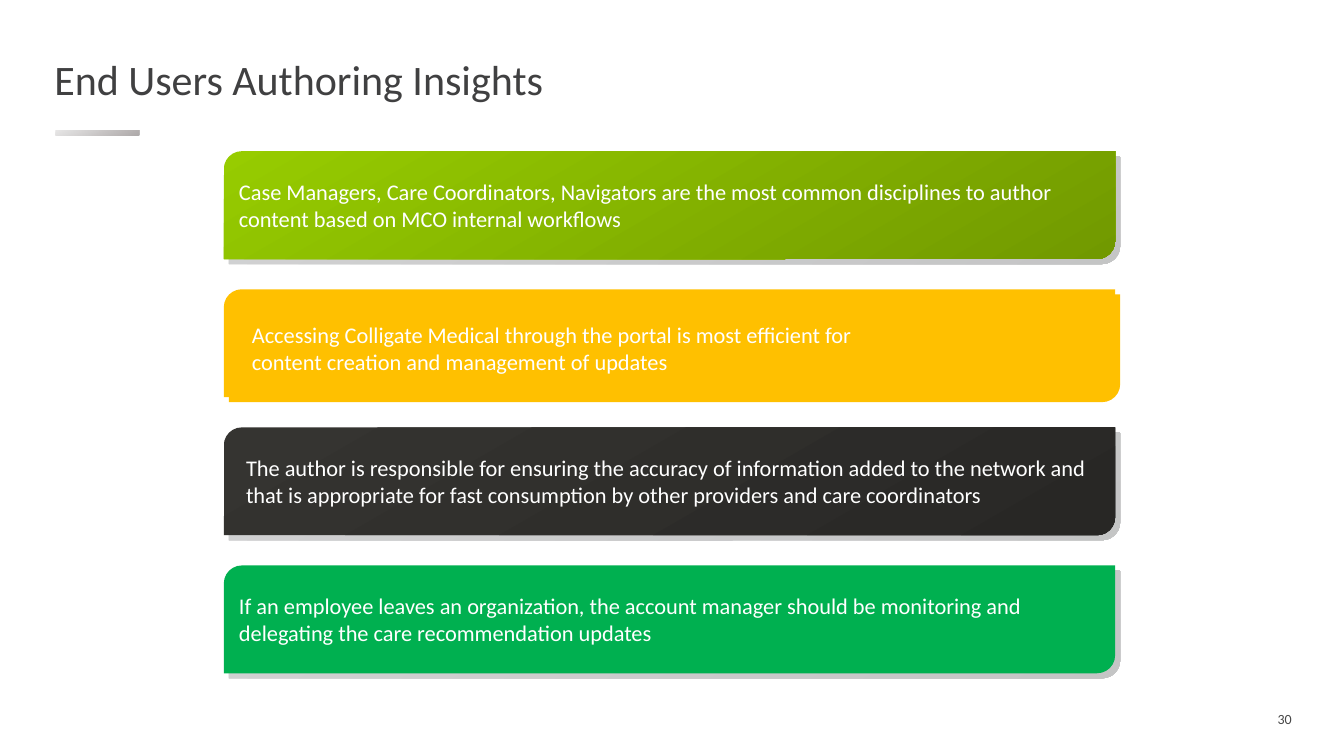
from lxml import etree
from pptx import Presentation
from pptx.dml.color import RGBColor
from pptx.enum.shapes import MSO_SHAPE
from pptx.enum.text import MSO_ANCHOR, PP_ALIGN
from pptx.oxml.ns import qn
from pptx.util import Inches, Pt

RECT = MSO_SHAPE.RECTANGLE
DIAG = MSO_SHAPE.ROUND_2_DIAG_RECTANGLE
TOP, MIDDLE = MSO_ANCHOR.TOP, MSO_ANCHOR.MIDDLE
LEFT, RIGHT = PP_ALIGN.LEFT, PP_ALIGN.RIGHT

WHITE = "FFFFFF"
SHADE = ("818285", "58595B")
AMBER = "FFC000"
PITCH = 1.37
OFFSET = 0.05

CARDS = [
    (("97CC00", "719900"), SHADE, {},
     "Case Managers, Care Coordinators, Navigators are the most common "
     "disciplines to author content based on MCO internal workflows"),
    (AMBER, AMBER, {"box": (0.18, 0.27, 6.67, 0.64)},
     "Accessing Colligate Medical through the portal is most efficient for "
     "content creation and management of updates"),
    (("353431", "282725"), SHADE, {"indent": 0.07, "after": 3},
     "The author is responsible for ensuring the accuracy of information "
     "added to the network and that is appropriate for fast consumption by "
     "other providers and care coordinators"),
    ("00B050", SHADE, {},
     "If an employee leaves an organization, the account manager should be "
     "monitoring and delegating the care recommendation updates"),
]


def color(code):
    return RGBColor.from_string(code)


def paint(shape, fill, alpha=None):
    if isinstance(fill, str):
        shape.fill.solid()
        shape.fill.fore_color.rgb = color(fill)
        return
    shape.fill.gradient()
    shape.fill.gradient_angle = 300
    for stop, code, place in zip(shape.fill.gradient_stops, fill, (0, 1)):
        stop.color.rgb = color(code)
        stop.position = place
    if alpha:
        for node in shape._element.spPr.iter(qn("a:srgbClr")):
            etree.SubElement(node, qn("a:alpha")).set("val", str(alpha * 1000))


def add_block(slide, kind, box, fill, alpha=None):
    shape = slide.shapes.add_shape(kind, *map(Inches, box))
    shape.shadow.inherit = False
    shape.line.fill.background()
    paint(shape, fill, alpha)
    return shape


def write(shape, text, size=16, ink=WHITE, align=LEFT, anchor=MIDDLE,
          indent=0, after=0, lines=1.0, inset=0.05):
    frame = shape.text_frame
    frame.word_wrap = True
    frame.vertical_anchor = anchor
    frame.margin_top = frame.margin_bottom = Inches(inset)
    para = frame.paragraphs[0]
    para.alignment = align
    para.line_spacing = lines
    para.space_after = Pt(after)
    if indent:
        props = para._p.get_or_add_pPr()
        props.set("marL", str(Inches(indent)))
        props.set("indent", "0")
    run = para.add_run()
    run.text = text
    run.font.name = "Calibri"
    run.font.size = Pt(size)
    run.font.color.rgb = color(ink)


def add_label(slide, box, text, **style):
    write(slide.shapes.add_textbox(*map(Inches, box)), text, **style)


def add_head(slide, left, top, width, height):
    add_block(slide, RECT, (left + 0.11, top + 0.77, 0.83, 0.05),
              ("E7E6E6", "AFABAB"))
    add_label(slide, (left, top, width, height), "End Users Authoring Insights",
              size=30, ink="404041", lines=0.9, inset=0)


def add_card(slide, left, top, width, height, fill, shade, style, text):
    add_block(slide, DIAG, (left + OFFSET, top + OFFSET, width, height),
              shade, alpha=35)
    card = add_block(slide, DIAG, (left, top, width, height), fill)
    if "box" in style:
        x, y, w, h = style["box"]
        add_label(slide, (left + x, top + y, w, h), text, anchor=TOP)
    else:
        write(card, text, **style)


def add_cards(slide, left, top, width, height):
    for row, card in enumerate(CARDS):
        add_card(slide, left, top + row * PITCH, width, height, *card)


def main():
    deck = Presentation()
    deck.slide_width = Inches(13.33)
    deck.slide_height = Inches(7.5)
    slide = deck.slides.add_slide(deck.slide_layouts[6])
    add_head(slide, 0.44, 0.52, 12.46, 0.58)
    add_cards(slide, 2.22, 1.5, 8.84, 1.07)
    add_label(slide, (9.42, 7.05, 3.49, 0.16), "30",
              size=10, ink="474747", align=RIGHT)
    deck.save("out.pptx")


if __name__ == "__main__":
    main()
